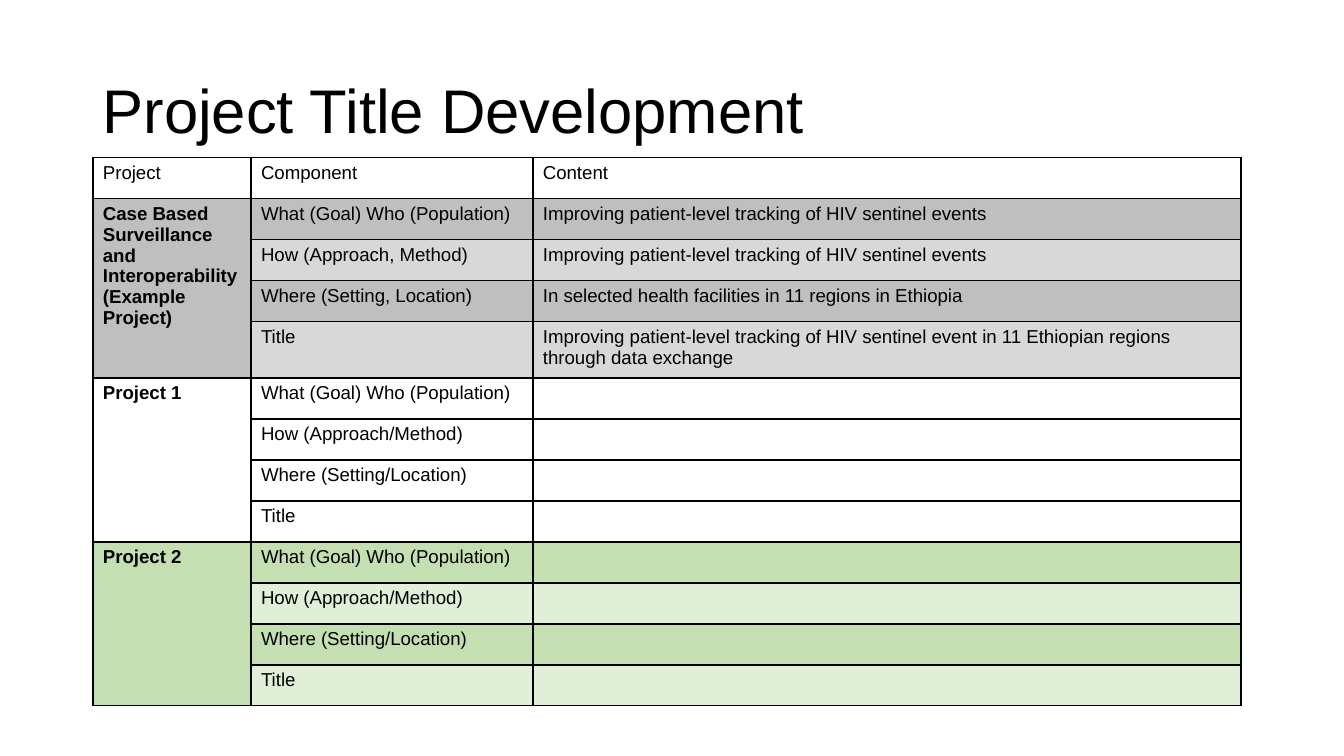
from lxml import etree
from pptx import Presentation
from pptx.dml.color import RGBColor
from pptx.enum.text import MSO_ANCHOR, MSO_AUTO_SIZE, PP_ALIGN
from pptx.oxml.ns import qn
from pptx.util import Pt

LEFT, MIDDLE, NO_FIT = PP_ALIGN.LEFT, MSO_ANCHOR.MIDDLE, MSO_AUTO_SIZE.NONE

TITLE = "Project Title Development"
HEADER = ("Project", "Component", "Content")
GOAL = "What (Goal) Who (Population)"
TRACKING = "Improving patient-level tracking of HIV sentinel events"
BLANK_PARTS = [(GOAL, ""), ("How (Approach/Method)", ""),
               ("Where (Setting/Location)", ""), ("Title", "")]
# project, its two alternating row shades, (component, content) rows
PROJECTS = [
    ("Case Based Surveillance and Interoperability (Example Project)", "gray", [
        (GOAL, TRACKING),
        ("How (Approach, Method)", TRACKING),
        ("Where (Setting, Location)",
         "In selected health facilities in 11 regions in Ethiopia"),
        ("Title", "Improving patient-level tracking of HIV sentinel event in 11 "
                  "Ethiopian regions through data exchange"),
    ]),
    ("Project 1", "plain", BLANK_PARTS),
    ("Project 2", "green", BLANK_PARTS),
]

THEME = {
    "font": "Arial", "text": "000000", "border": "000000", "border_width": Pt(1),
    "title_size": Pt(33), "cell_size": Pt(10),
    "gray": ("BFBFBF", "D8D8D8"),
    "plain": (None, None),
    "green": ("C4E0B2", "E1EFD8"),
}

SLIDE_SIZE = Pt(720), Pt(405)
TITLE_BOX = {"left": Pt(49.5), "top": Pt(21.5), "width": Pt(621), "height": Pt(78.5)}
TABLE_LEFT, TABLE_TOP = Pt(49.75), Pt(84.4)
COLUMN_WIDTHS = [Pt(84.75), Pt(151), Pt(379.25)]
ROW_HEIGHT, TALL_ROW_HEIGHT, TALL_ROW = Pt(21.95), Pt(30.4), 4
CELL_FORMAT = {"margin_left": Pt(5.4), "margin_right": Pt(5.4),
               "margin_top": Pt(2.7), "margin_bottom": Pt(2.7)}
TITLE_FORMAT = {"margin_left": Pt(5.4), "margin_right": Pt(5.4),
                "margin_top": Pt(2.7), "margin_bottom": Pt(2.7),
                "vertical_anchor": MIDDLE, "auto_size": NO_FIT, "word_wrap": True}


def apply(target, values):
    for name, value in values.items():
        setattr(target, name, value)


def style_run(run, size, bold=False):
    apply(run.font, {"name": THEME["font"], "size": size, "bold": bold})
    run.font.color.rgb = RGBColor.from_string(THEME["text"])


def add_borders(cell):
    properties = cell._tc.get_or_add_tcPr()
    for side in ("a:lnL", "a:lnR", "a:lnT", "a:lnB"):
        line = etree.SubElement(properties, qn(side), w=str(THEME["border_width"]))
        fill = etree.SubElement(line, qn("a:solidFill"))
        etree.SubElement(fill, qn("a:srgbClr"), val=THEME["border"])


def fill_cell(cell, text, shade, bold=False):
    apply(cell, CELL_FORMAT)
    add_borders(cell)
    if shade:
        cell.fill.solid()
        cell.fill.fore_color.rgb = RGBColor.from_string(shade)
    else:
        cell.fill.background()
    paragraph = cell.text_frame.paragraphs[0]
    if text:
        run = paragraph.add_run()
        run.text = text
        style_run(run, THEME["cell_size"], bold)
    else:  # keeps an empty cell from stretching its row
        etree.SubElement(paragraph._p, qn("a:endParaRPr"),
                         sz=str(int(THEME["cell_size"].pt * 100)))


def add_title(slide):
    title = slide.shapes.title
    apply(title, TITLE_BOX)
    apply(title.text_frame, TITLE_FORMAT)
    paragraph = title.text_frame.paragraphs[0]
    apply(paragraph, {"alignment": LEFT, "line_spacing": 0.9})
    run = paragraph.add_run()
    run.text = TITLE
    style_run(run, THEME["title_size"])


def add_project_table(slide):
    row_count = 1 + sum(len(parts) for _, _, parts in PROJECTS)
    heights = [TALL_ROW_HEIGHT if row == TALL_ROW else ROW_HEIGHT
               for row in range(row_count)]
    table = slide.shapes.add_table(row_count, len(HEADER), TABLE_LEFT, TABLE_TOP,
                                   sum(COLUMN_WIDTHS), sum(heights)).table
    apply(table, {"first_row": False, "horz_banding": False})
    for column, width in zip(table.columns, COLUMN_WIDTHS):
        column.width = width
    for row, height in zip(table.rows, heights):
        row.height = height

    for column, heading in enumerate(HEADER):
        fill_cell(table.cell(0, column), heading, None)
    first = 1
    for project, palette, parts in PROJECTS:
        shades = THEME[palette]
        for offset, part in enumerate(parts):
            row = first + offset
            fill_cell(table.cell(row, 0), "" if offset else project, shades[0], bold=True)
            for column, text in enumerate(part, start=1):
                fill_cell(table.cell(row, column), text, shades[offset % 2])
        table.cell(first, 0).merge(table.cell(first + len(parts) - 1, 0))
        first += len(parts)


def main():
    deck = Presentation()
    deck.slide_width, deck.slide_height = SLIDE_SIZE
    slide = deck.slides.add_slide(deck.slide_layouts[5])
    add_title(slide)
    add_project_table(slide)
    deck.save("out.pptx")


if __name__ == "__main__":
    main()
